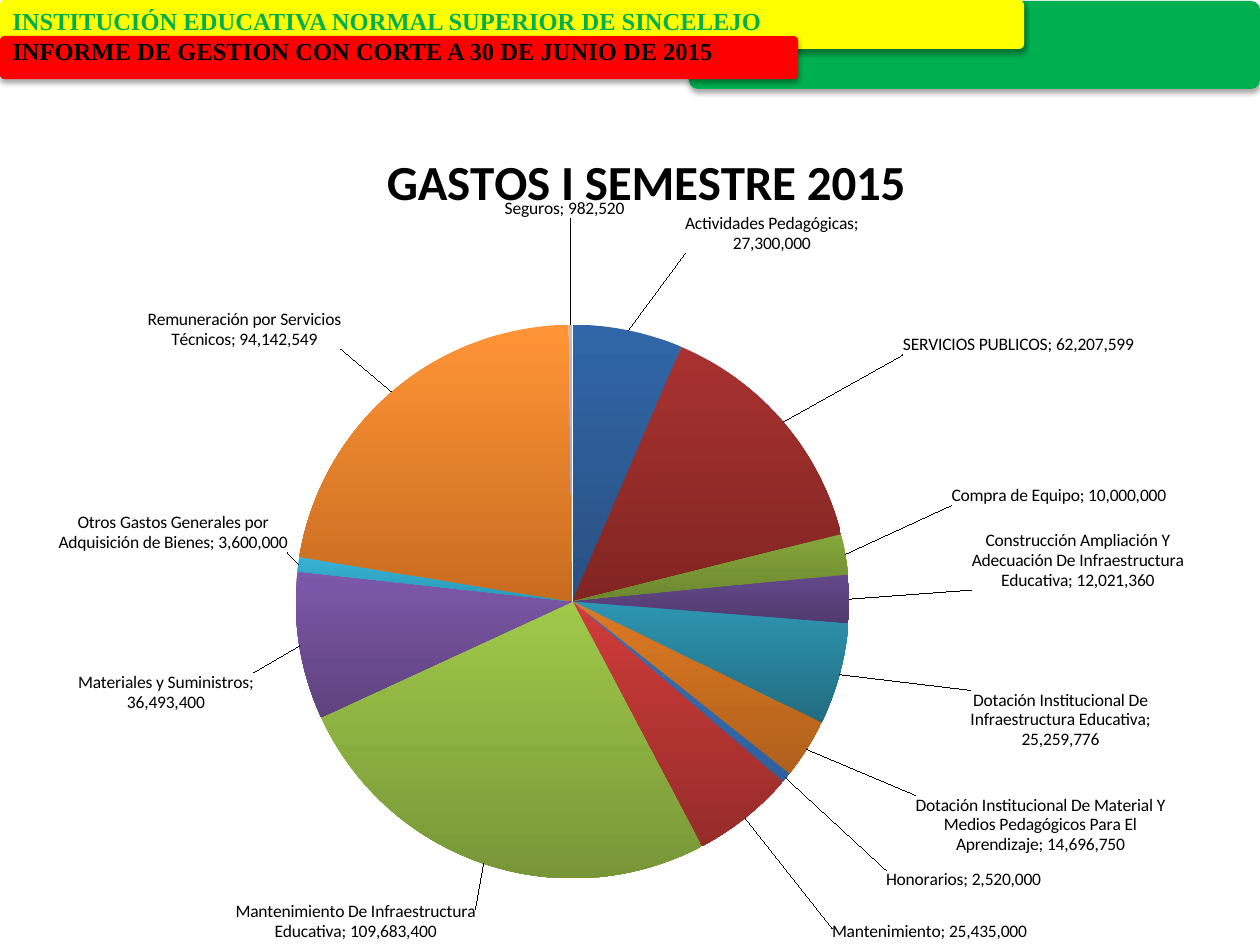
from math import cos, pi, sin

from lxml.etree import fromstring
from pptx import Presentation
from pptx.chart.data import CategoryChartData
from pptx.dml.color import RGBColor
from pptx.enum.chart import XL_CHART_TYPE, XL_LABEL_POSITION
from pptx.enum.shapes import MSO_SHAPE
from pptx.enum.text import MSO_AUTO_SIZE
from pptx.oxml import parse_xml
from pptx.oxml.ns import nsdecls, qn
from pptx.util import Pt

WIDE, HIGH = 1260, 945
HEX = {"green": "00B050", "yellow": "FFFF00", "red": "FF0000", "black": "000000"}
BARS = [
    ("green", 689, 1, 571, 88),
    ("yellow", 0, 0, 1024, 49),
    ("red", 0, 36, 798, 43),
]
HEADS = [
    ("INSTITUCIÓN EDUCATIVA NORMAL SUPERIOR DE SINCELEJO", "green"),
    ("INFORME DE GESTION CON CORTE A 30 DE JUNIO DE 2015", "black"),
]
FRAME = (0, 106, 1260, 835)
PIE = (573, 601, 277)
COSTS = [
    ("Actividades Pedagógicas", 27300000, (684, 260), "3066A8", "2A5082"),
    ("SERVICIOS PUBLICOS", 62207599, (898, 359), "A83230", "812522"),
    ("Compra de Equipo", 10000000, (945, 506), "84A63B", "6C8830"),
    ("Construcción Ampliación Y Adecuación De Infraestructura Educativa",
     12021360, (965, 560), "64488A", "503A6E"),
    ("Dotación Institucional De Infraestructura Educativa",
     25259776, (964, 688), "2E95B2", "226C80"),
    ("Dotación Institucional De Material Y Medios Pedagógicos Para El Aprendizaje",
     14696750, (910, 791), "DD7A22", "B0601C"),
    ("Honorarios", 2520000, (881, 865), "3A70B5", "305F9C"),
    ("Mantenimiento", 25435000, (828, 922), "D03C3A", "962C2A"),
    ("Mantenimiento De Infraestructura Educativa",
     109683400, (478, 902), "A0C94A", "789638"),
    ("Materiales y Suministros", 36493400, (261, 671), "7E58AA", "5E427E"),
    ("Otros Gastos Generales por Adquisición de Bienes",
     3600000, (295, 553), "36B2D4", "2C98B6"),
    ("Remuneración por Servicios Técnicos",
     94142549, (346, 354), "FF9436", "C86C20"),
    ("Seguros", 982520, (565, 225), "B0BFDD", "8FA0C0"),
]


def px(num):
    """Turn pixels into EMU."""
    return round(num * 914400 / 126)


def rgb(code):
    """Turn a hex string into a colour."""
    return RGBColor.from_string(code)


def layout(body):
    """Make a manual chart layout."""
    return parse_xml(f"<c:layout {nsdecls('c')}><c:manualLayout>{body}"
                     "</c:manualLayout></c:layout>")


def place(x, y, mode=""):
    """Write the place part of a layout."""
    return f'{mode}<c:x val="{x:.4f}"/><c:y val="{y:.4f}"/>'


class Deck:
    """Hold the style and the current slide."""

    edge = '<c:xMode val="edge"/><c:yMode val="edge"/>'

    def __init__(self):
        """Start a deck with one blank slide."""
        self.deck = Presentation()
        self.deck.slide_width, self.deck.slide_height = px(WIDE), px(HIGH)
        self.slide = self.deck.slides.add_slide(self.deck.slide_layouts[6])

    def bar(self, tone, *box):
        """Add a rounded bar with a soft shadow."""
        bar = self.slide.shapes.add_shape(MSO_SHAPE.ROUNDED_RECTANGLE, *map(px, box))
        bar.adjustments[0] = 0.1
        bar.fill.solid()
        bar.fill.fore_color.rgb = rgb(HEX[tone])
        bar.line.fill.background()
        bar.shadow.inherit = False
        glow = bar._element.spPr.find(qn("a:effectLst"))
        glow.append(fromstring(
            f'<a:outerShdw {nsdecls("a")} blurRad="{Pt(3.1)}" dist="{Pt(1.8)}" '
            'dir="5400000" rotWithShape="0"><a:srgbClr val="000000">'
            '<a:alpha val="35000"/></a:srgbClr></a:outerShdw>'))

    def text(self, lines, *box):
        """Add a box of bold heading lines."""
        frame = self.slide.shapes.add_textbox(*map(px, box)).text_frame
        frame.word_wrap = True
        frame.auto_size = MSO_AUTO_SIZE.SHAPE_TO_FIT_TEXT
        frame.text = "\n".join(words for words, _ in lines)
        for para, (_, tone) in zip(frame.paragraphs, lines):
            para.font.name, para.font.size = "Times New Roman", Pt(14)
            para.font.bold = True
            para.font.color.rgb = rgb(HEX[tone])

    def pie(self, title, costs):
        """Add the pie chart of costs."""
        data = CategoryChartData(number_format="#,##0")
        data.categories = [row[0] for row in costs]
        data.add_series("Series 1", [row[1] for row in costs])
        chart = self.slide.shapes.add_chart(
            XL_CHART_TYPE.PIE, *map(px, FRAME), data).chart
        chart.has_legend = False
        chart.font.name, chart.font.size = "Calibri", Pt(10)
        chart.font.color.rgb = rgb(HEX["black"])
        self.title(chart, title)
        area = chart._chartSpace.chart.plotArea
        for old in area.findall(qn("c:layout")):
            area.remove(old)
        area.insert(0, layout(
            '<c:layoutTarget val="inner"/>' + place(0.184, 0.262, self.edge)
            + '<c:w val="0.541"/><c:h val="0.663"/>'))
        series = chart.plots[0].series[0]
        for spot, row in enumerate(costs):
            fill = series.points[spot].format.fill
            fill.gradient()
            fill.gradient_angle = 270
            for stop, code in zip(fill.gradient_stops, row[3:]):
                stop.color.rgb = rgb(code)
        self.labels(series, costs)

    def title(self, chart, words):
        """Set the chart title and its place."""
        chart.has_title = True
        frame = chart.chart_title.text_frame
        frame.text = words
        font = frame.paragraphs[0].font
        font.name, font.size, font.bold = "Calibri", Pt(28), True
        font.color.rgb = rgb(HEX["black"])
        node = chart.chart_title._element
        for old in node.findall(qn("c:layout")):
            node.remove(old)
        node.find(qn("c:tx")).addnext(layout(place(0.3, 0.04, self.edge)))

    def labels(self, series, costs):
        """Put each label at its anchor, led from the rim of the pie."""
        labels = series.data_labels
        labels.show_value = labels.show_category_name = True
        labels.number_format, labels.number_format_is_linked = "#,##0", False
        labels.position = XL_LABEL_POSITION.OUTSIDE_END
        root = labels._element
        split = f"<c:separator {nsdecls('c')}>; </c:separator>"
        root.find(qn("c:showBubbleSize")).addnext(parse_xml(split))
        total, past = sum(row[1] for row in costs), 0
        mid_x, mid_y, reach = PIE
        for spot, (_, cost, (x, y), *_) in enumerate(costs):
            turn = 2 * pi * (past + cost / 2) / total
            past += cost
            shift = place((x - mid_x - reach * sin(turn)) / FRAME[2],
                          (y - mid_y + reach * cos(turn)) / FRAME[3])
            label = parse_xml(
                f'<c:dLbl {nsdecls("c")}><c:idx val="{spot}"/>'
                '<c:dLblPos val="outEnd"/><c:showLegendKey val="0"/>'
                '<c:showVal val="1"/><c:showCatName val="1"/>'
                '<c:showSerName val="0"/><c:showPercent val="0"/>'
                '<c:showBubbleSize val="0"/><c:separator>; </c:separator></c:dLbl>')
            label.insert(1, layout(shift))
            root.insert(spot, label)


def main():
    """Build the slide and save it."""
    deck = Deck()
    for bar in BARS:
        deck.bar(*bar)
    deck.text(HEADS, 0, 0, 1260, 72)
    deck.pie("GASTOS I SEMESTRE 2015", COSTS)
    deck.deck.save("out.pptx")


if __name__ == "__main__":
    main()
